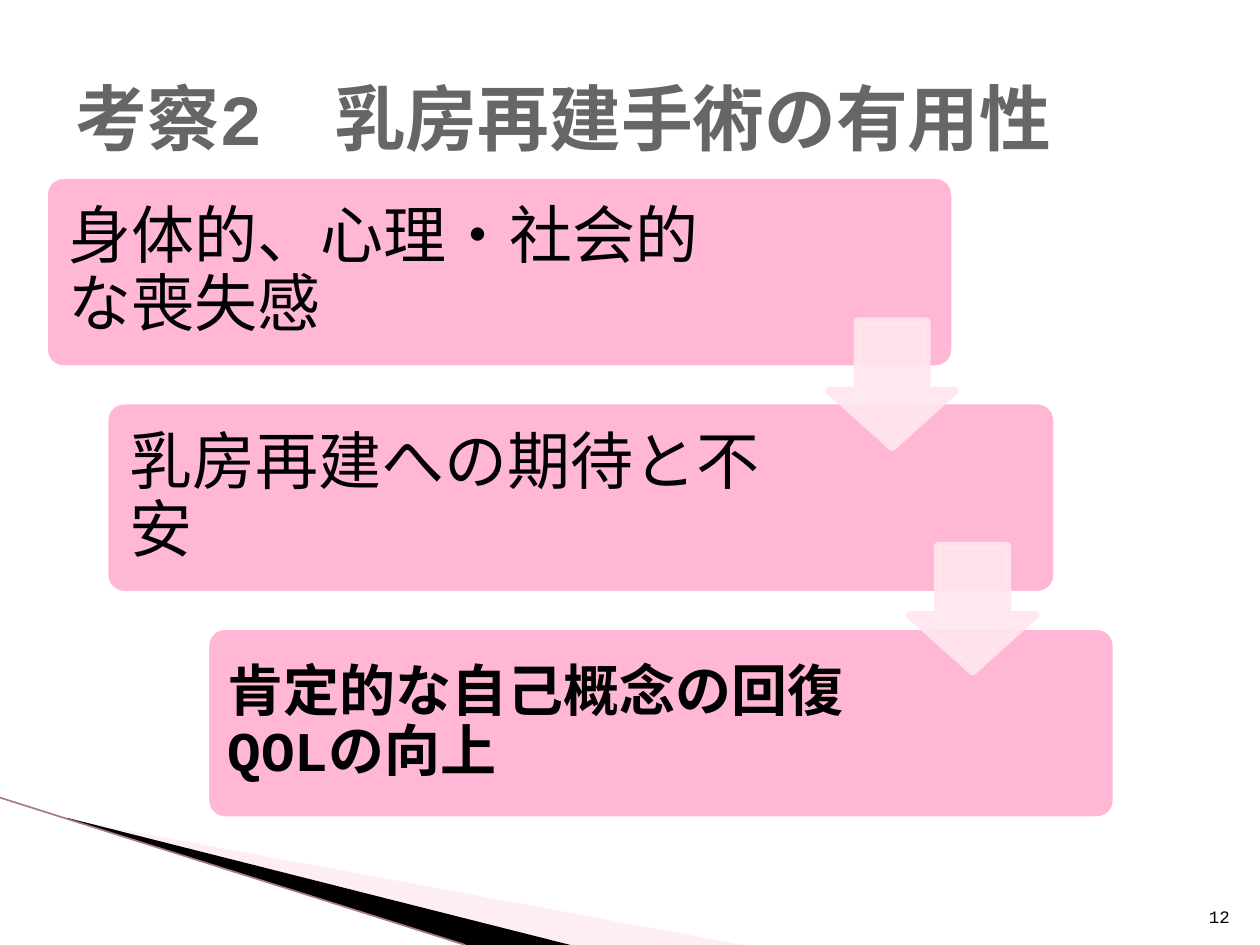
from lxml import etree
from pptx import Presentation
from pptx import util as u
from pptx.dml import color
from pptx.enum import shapes, text
from pptx.oxml import ns

WHITE = color.RGBColor(0xFF, 0xFF, 0xFF)
BLACK = color.RGBColor(0x00, 0x00, 0x00)
GREY = color.RGBColor(0x66, 0x66, 0x66)
PINK = color.RGBColor(0xFF, 0xB7, 0xD5)
PALE_PINK = color.RGBColor(0xFF, 0xD4, 0xE5)
ARROW_PINK = color.RGBColor(0xFF, 0xE6, 0xEF)
MAUVE = color.RGBColor(0xA9, 0x78, 0x8D)

STEP_TOP, STEP_PITCH, STEP_HEIGHT = 100.1, 128.85, 110.9
STEPS = [
    ("身体的、心理・社会的な喪失感", 25.2, 520.6, 401, 10.8, {"size": u.Pt(36)}),
    ("乳房再建への期待と不安", 59.8, 544.3, 414.7, 10.8, {"size": u.Pt(36)}),
    ("肯定的な自己概念の回復QOLの向上", 117.4, 520.6, 396, 9.4,
     {"size": u.Pt(32), "bold": True}),
]
ARROWS = [(473.8, 183.6), (519.8, 311.8)]


class SlideStyle:
    font_name = "Courier New"

    def __init__(self, page):
        self.page = page

    def set_values(self, target, values):
        for name, value in values.items():
            setattr(target, name, value)

    def place(self, left, top, width, height):
        return [u.Pt(value) for value in (left, top, width, height)]

    def set_alpha(self, fill_parent, percent):
        for node in fill_parent.iter(ns.qn("a:srgbClr")):
            etree.SubElement(node, ns.qn("a:alpha"), val=str(percent * 1000))

    def paint(self, shape, fill, line=None, alpha=100):
        shape.shadow.inherit = False
        shape.fill.solid()
        shape.fill.fore_color.rgb = fill
        if line is None:
            shape.line.fill.background()
        else:
            shape.line.color.rgb = line
            shape.line.width = u.Pt(4.33)
        if alpha < 100:
            self.set_alpha(shape._element.spPr, alpha)

    def fill_text(self, box, words, font, paragraph, anchor, inset=None):
        frame = box.text_frame
        self.set_values(frame, {"word_wrap": True, "vertical_anchor": anchor,
                                "auto_size": text.MSO_AUTO_SIZE.NONE})
        if inset is not None:
            sides = ("left", "top", "right", "bottom")
            self.set_values(frame, {f"margin_{side}": u.Pt(inset) for side in sides})
        para = frame.paragraphs[0]
        self.set_values(para, paragraph)
        span = para.add_run()
        span.text = words
        span.font.color.rgb = font.get("color", BLACK)
        values = {key: value for key, value in font.items() if key != "color"}
        self.set_values(span.font, {"name": self.font_name, **values})

    def title(self, words, area):
        box = self.page.shapes.title
        names = ("left", "top", "width", "height")
        self.set_values(box, dict(zip(names, self.place(*area))))
        self.fill_text(box, words, {"size": u.Pt(41), "bold": True, "color": GREY},
                       {"alignment": text.PP_ALIGN.LEFT}, text.MSO_ANCHOR.MIDDLE)

    def text_box(self, words, area, font, paragraph, anchor, inset=None):
        box = self.page.shapes.add_textbox(*self.place(*area))
        self.fill_text(box, words, font, paragraph, anchor, inset)

    def preset(self, kind, area, adjustments, fill, line, alpha=100):
        shape = self.page.shapes.add_shape(kind, *self.place(*area))
        for index, value in enumerate(adjustments):
            shape.adjustments[index] = value
        self.paint(shape, fill, line, alpha)

    def polygon(self, points, fill, alpha=100):
        start, *rest = [(u.Pt(x), u.Pt(y)) for x, y in points]
        builder = self.page.shapes.build_freeform(*start)
        builder.add_line_segments(rest, close=True)
        self.paint(builder.convert_to_shape(), fill, alpha=alpha)

    def line(self, start, end, colour, width):
        ends = [u.Pt(value) for value in (*start, *end)]
        connector = self.page.shapes.add_connector(shapes.MSO_CONNECTOR.STRAIGHT, *ends)
        connector.line.color.rgb = colour
        connector.line.width = u.Pt(width)
        etree.SubElement(connector._element.spPr, ns.qn("a:effectLst"))


def main():
    deck = Presentation()
    deck.slide_width, deck.slide_height = u.Pt(720), u.Pt(540)
    style = SlideStyle(deck.slides.add_slide(deck.slide_layouts[5]))

    style.polygon([(39.6, 468.5), (424.6, 540), (326, 540), (39.6, 468)], PALE_PINK, 40)
    style.polygon([(38.2, 467.3), (326, 540), (265, 540), (38.9, 468)], BLACK)
    style.line((0, 455.8), (266, 540), MAUVE, 0.95)

    style.title("考察2　乳房再建手術の有用性", (36, 21.6, 648, 90))
    style.text_box("12", (681.1, 504.7, 28.8, 28.8), {"size": u.Pt(10)},
                   {"alignment": text.PP_ALIGN.RIGHT}, text.MSO_ANCHOR.BOTTOM)

    for index, (words, left, width, text_width, inset, font) in enumerate(STEPS):
        top = STEP_TOP + index * STEP_PITCH
        style.preset(shapes.MSO_SHAPE.ROUNDED_RECTANGLE,
                     (left, top, width, STEP_HEIGHT), [0.1], PINK, WHITE)
        style.text_box(words, (left + 3.25, top + 3.25, text_width, STEP_HEIGHT - 6.5),
                       font, {"line_spacing": 0.9}, text.MSO_ANCHOR.MIDDLE, inset)

    for left, top in ARROWS:
        style.preset(shapes.MSO_SHAPE.DOWN_ARROW, (left, top, 72, 72),
                     [0.55, 0.45], ARROW_PINK, ARROW_PINK, 90)

    deck.save("out.pptx")


if __name__ == "__main__":
    main()
